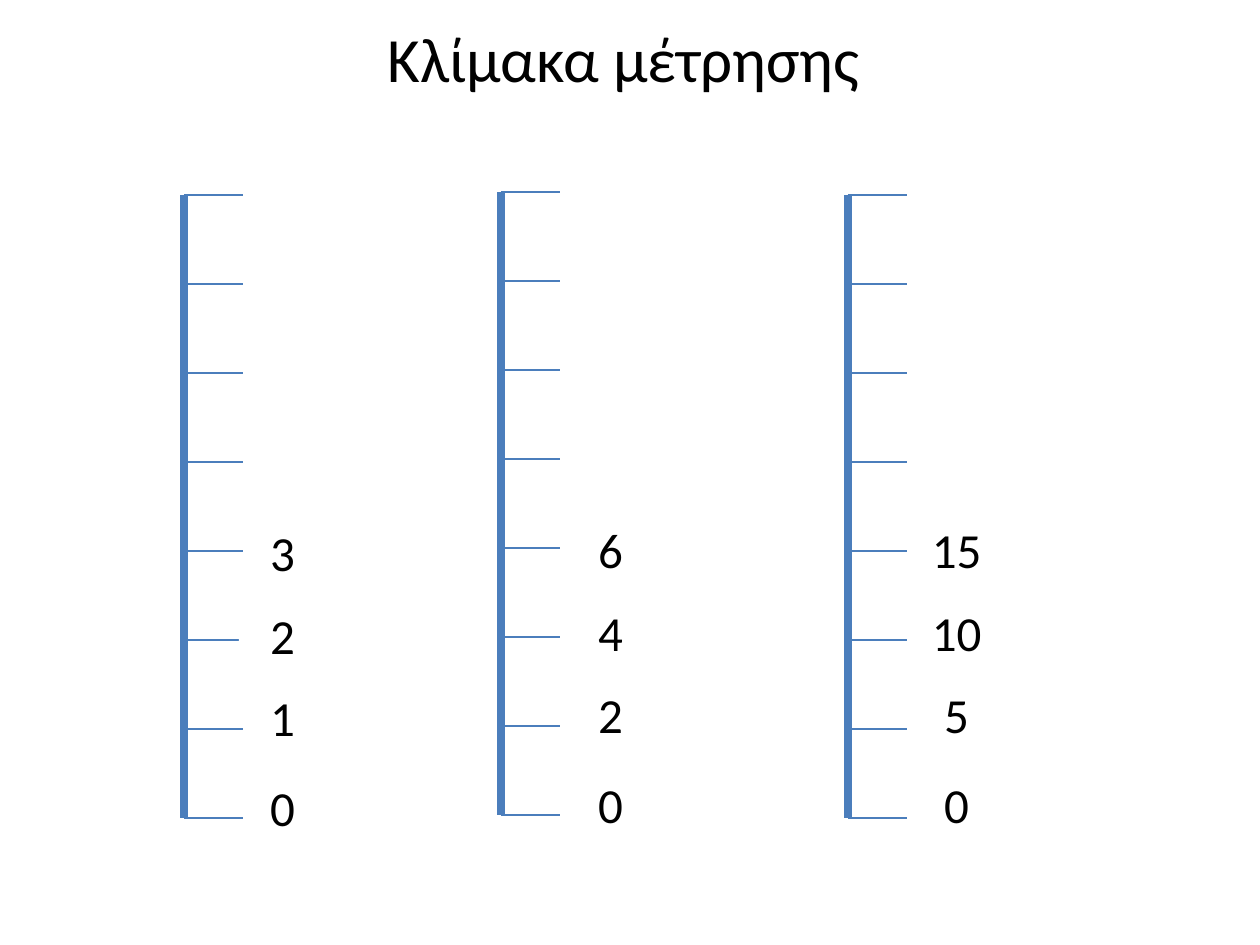
from dataclasses import dataclass

from lxml.etree import SubElement
from pptx import Presentation
from pptx.dml.color import RGBColor
from pptx.enum.shapes import MSO_CONNECTOR as Link, MSO_SHAPE as Form
from pptx.enum.text import MSO_ANCHOR as Anchor, PP_ALIGN as Align
from pptx.oxml.ns import qn
from pptx.shapes.shapetree import GroupShapes
from pptx.text.text import TextFrame
from pptx.util import Emu, Pt

PX = 914400 / 126
BLUE = RGBColor(0x4B, 0x7E, 0xBC)
WHITE = RGBColor(0xFF, 0xFF, 0xFF)
BLACK = RGBColor(0, 0, 0)

# Ruler geometry in px
STEPS, STEP, TICK = 7, 89, 59
WIDE, HIGH = 79, 73
DROPS = (0, 83, 165, 255)


@dataclass
class Ruler:
    left: int
    top: int
    text_x: int
    text_y: int
    marks: tuple[str, ...]
    wider: tuple[int, ...] = (0, 0, 0, 0)


RULERS = (
    Ruler(184, 195, 243, 515, ("3", "2", "1", "0"), (0, 4, 0, 0)),
    Ruler(501, 192, 571, 512, ("6", "4", "2", "0")),
    Ruler(848, 195, 917, 512, ("15", "10", "5", "0")),
)


def px(*nums: int) -> list[Emu]:
    return [Emu(round(n * PX)) for n in nums]


def write(frame: TextFrame, text: str, size: int) -> None:
    frame.word_wrap = True
    frame.vertical_anchor = Anchor.MIDDLE
    para = frame.paragraphs[0]
    para.alignment = Align.CENTER
    run = para.add_run()
    run.text = text
    style = {"name": "Calibri", "size": Pt(size)}
    for key, value in style.items():
        setattr(run.font, key, value)
    run.font.color.rgb = BLACK


def draw_line(group: GroupShapes, ends: tuple[int, ...], width: float) -> None:
    line = group.add_connector(Link.STRAIGHT, *px(*ends))
    line.line.color.rgb = BLUE
    line.line.width = Pt(width)
    SubElement(line._element.spPr, qn("a:effectLst"))


def draw_mark(group: GroupShapes, box: tuple[int, ...], text: str) -> None:
    mark = group.add_shape(Form.RECTANGLE, *px(*box))
    mark.shadow.inherit = False
    mark.fill.solid()
    mark.fill.fore_color.rgb = WHITE
    mark.line.fill.background()
    write(mark.text_frame, text, 28)


def draw_ruler(group: GroupShapes, ruler: Ruler) -> None:
    x = ruler.left
    # Stem pieces and ticks
    for i in range(STEPS + 1):
        y = ruler.top + i * STEP
        if i < STEPS:
            draw_line(group, (x, y, x, y + STEP), 4.5)
        draw_line(group, (x, y, x + TICK, y), 0.75)
    # Numbers
    for text, drop, pad in zip(ruler.marks, DROPS, ruler.wider):
        box = (ruler.text_x - pad, ruler.text_y + drop, WIDE + 2 * pad, HIGH)
        draw_mark(group, box, text)


def main() -> None:
    deck = Presentation()
    deck.slide_width, deck.slide_height = px(1260, 945)
    slide = deck.slides.add_slide(deck.slide_layouts[6])

    # Title
    title = slide.shapes.add_textbox(*px(64, 1, 1134, 113))
    write(title.text_frame, "Κλίμακα μέτρησης ", 36)

    # Rulers, one group each
    for ruler in RULERS:
        draw_ruler(slide.shapes.add_group_shape().shapes, ruler)

    deck.save("out.pptx")


if __name__ == "__main__":
    main()
